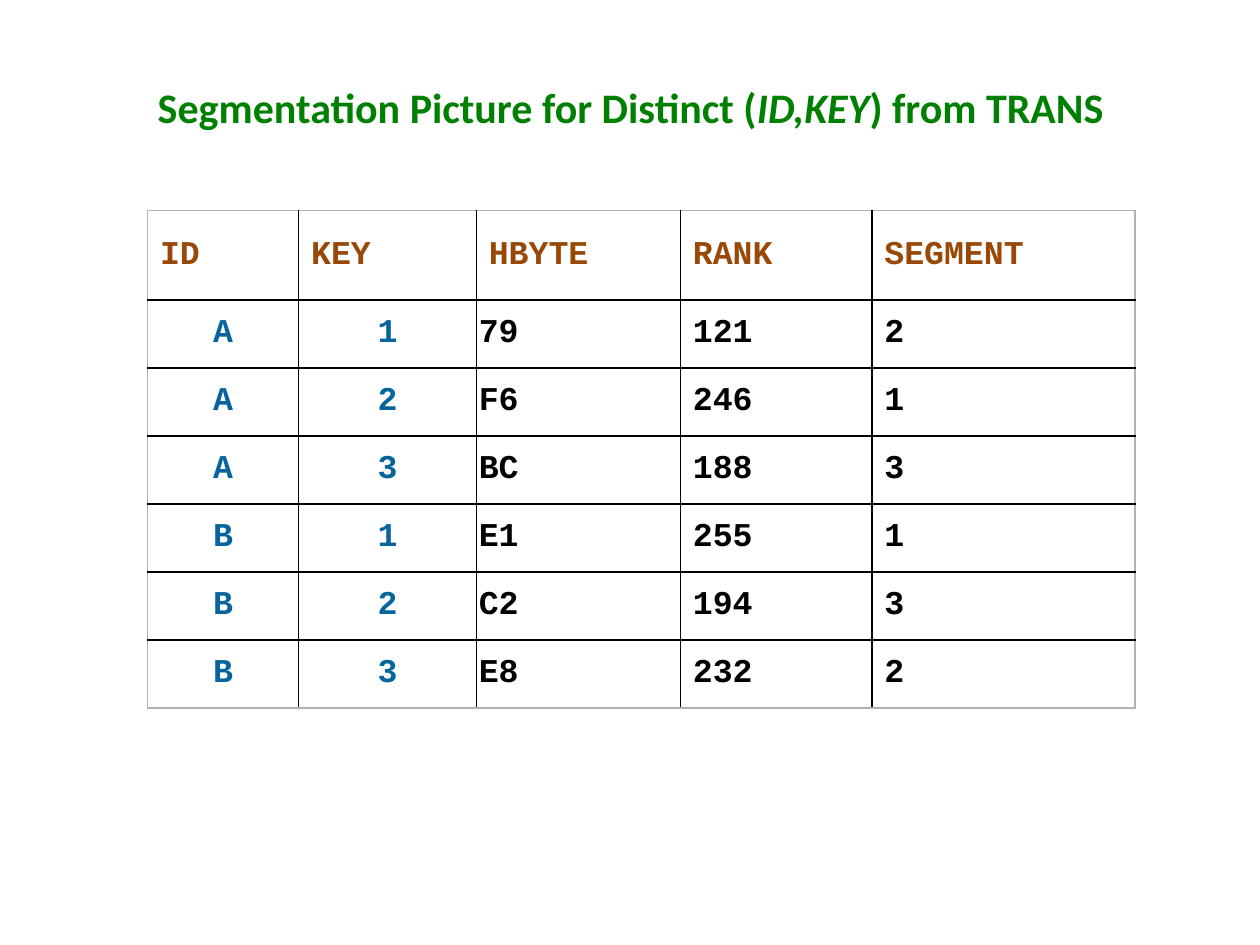
from lxml import etree
from pptx import Presentation
from pptx.dml.color import RGBColor
from pptx.enum.text import MSO_ANCHOR, PP_ALIGN
from pptx.oxml.ns import qn
from pptx.util import Inches, Pt

CENTER, LEFT = PP_ALIGN.CENTER, PP_ALIGN.LEFT
MIDDLE = MSO_ANCHOR.MIDDLE
GREEN, BROWN, BLUE, BLACK, GREY = "008000", "984807", "08649C", "000000", "B2B2B2"

HEADER = ["ID", "KEY", "HBYTE", "RANK", "SEGMENT"]
RECORDS = [
    ["A", "1", "79", "121", "2"],
    ["A", "2", "F6", "246", "1"],
    ["A", "3", "BC", "188", "3"],
    ["B", "1", "E1", "255", "1"],
    ["B", "2", "C2", "194", "3"],
    ["B", "3", "E8", "232", "2"],
]
COLUMN_WIDTHS = [1.2, 1.41, 1.62, 1.52, 2.09]
ROW_HEIGHTS = [0.71] + [0.54] * len(RECORDS)


def add_text(paragraph, text, *, size, font, color, italic=False, align=LEFT):
    paragraph.alignment = align
    run = paragraph.add_run()
    run.text = text
    run.font.size = Pt(size)
    run.font.name = font
    run.font.bold = True
    run.font.italic = italic
    run.font.color.rgb = RGBColor.from_string(color)


def set_border(cell, side, color):
    """Draw one side (L, R, T or B) of a cell; call in that order, before the fill."""
    line = etree.SubElement(cell._tc.get_or_add_tcPr(), qn(f"a:ln{side}"), w=str(Pt(1)))
    fill = etree.SubElement(line, qn("a:solidFill"))
    etree.SubElement(fill, qn("a:srgbClr"), val=color)


prs = Presentation()
prs.slide_width, prs.slide_height = Inches(10), Inches(7.5)
slide = prs.slides.add_slide(prs.slide_layouts[5])

title = slide.shapes.title
title.left, title.top = Inches(0.69), Inches(0.51)
title.width, title.height = Inches(8.63), Inches(0.67)
title.text_frame.vertical_anchor = MIDDLE
for part, italic in [("Segmentation Picture for Distinct (", False),
                     ("ID,KEY", True), (") from TRANS", False)]:
    add_text(title.text_frame.paragraphs[0], part, size=24, font="Calibri",
             color=GREEN, italic=italic, align=CENTER)

rows = [HEADER] + RECORDS
last_row, last_column = len(rows) - 1, len(HEADER) - 1
segments = slide.shapes.add_table(
    len(rows), len(HEADER), Inches(1.17), Inches(1.67),
    Inches(sum(COLUMN_WIDTHS)), Inches(sum(ROW_HEIGHTS))).table
segments.first_row = segments.horz_banding = False
for column, width in zip(segments.columns, COLUMN_WIDTHS):
    column.width = Inches(width)
for row, height in zip(segments.rows, ROW_HEIGHTS):
    row.height = Inches(height)

for r, values in enumerate(rows):
    for c, value in enumerate(values):
        cell = segments.cell(r, c)
        is_key = r > 0 and c < 2
        is_hash = r > 0 and c == 2
        outer_sides = {"L": c == 0, "R": c == last_column,
                       "T": r == 0, "B": r == last_row}
        for side, is_outer in outer_sides.items():
            set_border(cell, side, GREY if is_outer else BLACK)
        cell.fill.background()
        cell.vertical_anchor = MIDDLE
        cell.margin_left = cell.margin_right = Inches(0.02 if is_hash else 0.1)
        cell.margin_top = cell.margin_bottom = Inches(0 if is_hash else 0.07)
        paragraph = cell.text_frame.paragraphs[0]
        if is_hash:
            paragraph.space_before = paragraph.space_after = Pt(1.4)
        add_text(paragraph, value, size=19, font="Courier New",
                 color=BROWN if r == 0 else BLUE if is_key else BLACK,
                 align=CENTER if is_key else LEFT)

prs.save("out.pptx")
